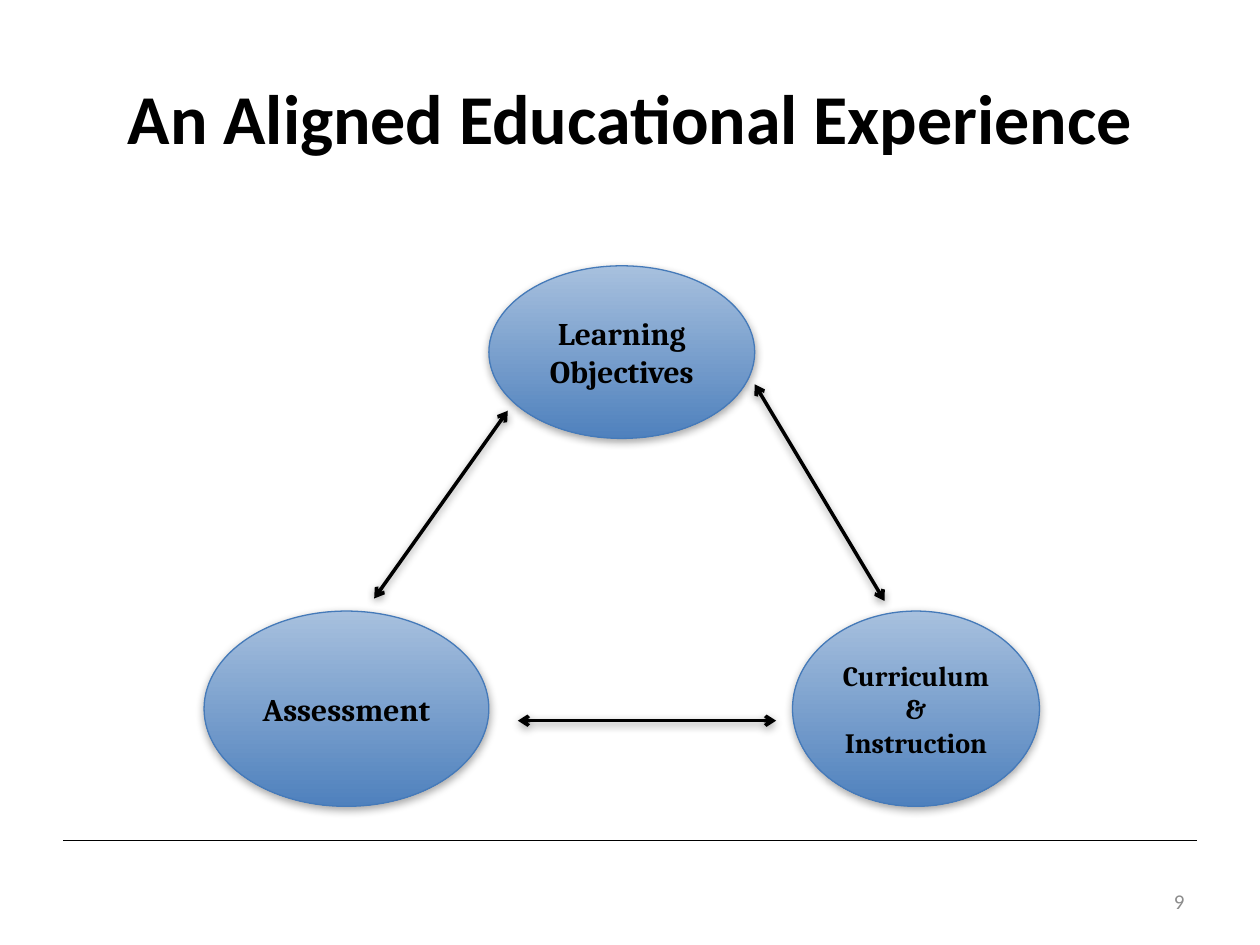
from lxml.etree import SubElement
from pptx import Presentation
from pptx.dml.color import RGBColor
from pptx.enum.shapes import MSO_CONNECTOR, MSO_SHAPE
from pptx.enum.text import MSO_ANCHOR, PP_ALIGN
from pptx.oxml.ns import qn
from pptx.util import Inches, Pt

# Content: ovals as (text, left, top, width, height, size)
TITLE = "An Aligned Educational Experience"
PAGE = "9"
ROW = 4.85
OVALS = [
    ("Learning Objectives", 3.88, 2.11, 2.11, 1.37, 18),
    ("Curriculum & Instruction", 6.29, ROW, 1.96, 1.55, 16),
    ("Assessment", 1.62, ROW, 2.26, 1.55, 18),
]
ARROWS = [
    (5.99, 3.05, 7.02, 4.77),
    (6.16, 5.72, 4.11, 5.72),
    (4.03, 3.26, 2.97, 4.75),
]
COLORS = {"ink": "000000", "page": "8C8C8C", "edge": "457AB9",
          "light": "A7C0DE", "deep": "4F81BD"}
WIDE, HIGH, EDGE = 10, 7.5, 0.5


def color(name):
    return RGBColor.from_string(COLORS[name])


def write(shape, text, size, font, ink="ink", bold=False,
          align=PP_ALIGN.CENTER, after=0):
    frame = shape.text_frame
    frame.text = text
    frame.word_wrap = True
    frame.vertical_anchor = MSO_ANCHOR.MIDDLE
    para = frame.paragraphs[0]
    para.alignment = align
    para.space_after = Pt(after)
    face = para.runs[0].font
    face.name, face.size, face.bold = font, Pt(size), bold
    face.color.rgb = color(ink)


def effects(shape, alpha=0, blur=5, drop=0):
    """Replace the theme shadow: none, or a soft one straight below."""
    props = shape._element.spPr
    group = SubElement(props, qn("a:effectLst"))
    if alpha:
        shade = SubElement(group, qn("a:outerShdw"), blurRad=str(Pt(blur)),
                           dist=str(Pt(drop)), dir="5400000", rotWithShape="0")
        tone = SubElement(shade, qn("a:srgbClr"), val=COLORS["ink"])
        SubElement(tone, qn("a:alpha"), val=str(alpha * 1000))


def draw_line(ends, width):
    line = slide.shapes.add_connector(
        MSO_CONNECTOR.STRAIGHT, *[Inches(n) for n in ends])
    line.line.color.rgb = color("ink")
    line.line.width = Pt(width)
    return line


deck = Presentation()
deck.slide_width, deck.slide_height = Inches(WIDE), Inches(HIGH)
slide = deck.slides.add_slide(deck.slide_layouts[5])

# Footer rule
effects(draw_line((EDGE, 6.67, WIDE - EDGE, 6.67), 0.5))

# Title
title = slide.shapes.title
title.left, title.top = Inches(EDGE), Inches(0.3)
title.width, title.height = Inches(WIDE - 2 * EDGE), Inches(1.25)
write(title, TITLE, 40, "Calibri", bold=True)

# Page number
page = slide.shapes.add_textbox(
    Inches(7.17), Inches(6.95), Inches(2.33), Inches(0.4))
write(page, PAGE, 12, "Calibri", "page", align=PP_ALIGN.RIGHT)

# Ovals
for text, *box, size in OVALS:
    oval = slide.shapes.add_shape(MSO_SHAPE.OVAL, *[Inches(n) for n in box])
    oval.fill.gradient()
    oval.fill.gradient_angle = 270
    for stop, name, spot in zip(oval.fill.gradient_stops,
                                ("light", "deep"), (0, 1)):
        stop.color.rgb = color(name)
        stop.position = spot
    oval.line.color.rgb = color("edge")
    oval.line.width = Pt(0.75)
    effects(oval, 35, drop=1.8)
    write(oval, text, size, "Cambria", bold=True, after=10)

# Two-way arrows
for ends in ARROWS:
    arrow = draw_line(ends, 2)
    stroke = arrow.line._get_or_add_ln()
    for tip in ("a:headEnd", "a:tailEnd"):
        SubElement(stroke, qn(tip), type="arrow")
    effects(arrow, 38, drop=1.6)

deck.save("out.pptx")
